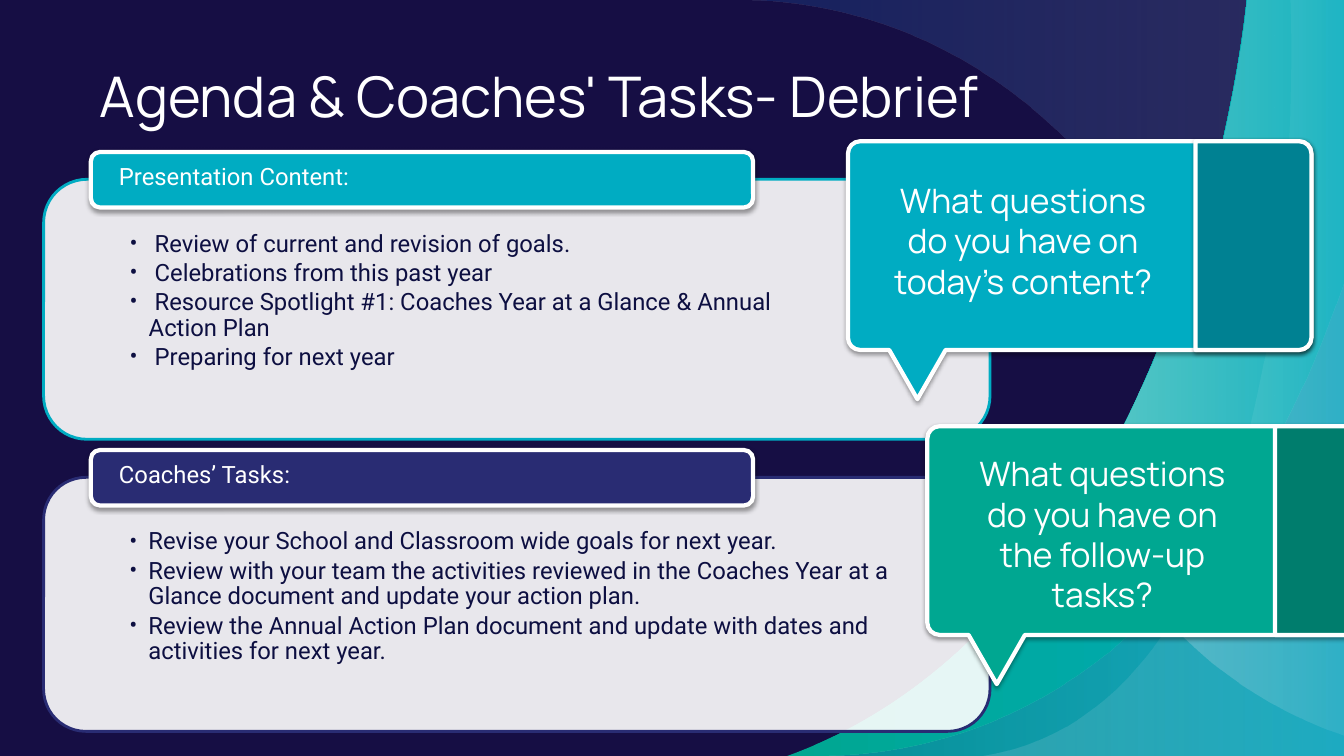
import pptx
import pptx.util
import pptx.dml.color
import pptx.enum.shapes
import pptx.enum.text
import pptx.oxml.ns
import lxml.etree

Cm, Pt = pptx.util.Cm, pptx.util.Pt
qn = pptx.oxml.ns.qn
rgb = pptx.dml.color.RGBColor.from_string
LEFT, CENTER = pptx.enum.text.PP_ALIGN.LEFT, pptx.enum.text.PP_ALIGN.CENTER
TOP, MIDDLE = pptx.enum.text.MSO_ANCHOR.TOP, pptx.enum.text.MSO_ANCHOR.MIDDLE
ROUNDED = pptx.enum.shapes.MSO_SHAPE.ROUNDED_RECTANGLE

COLORS = {
    "night": "160E44", "shade": "12102F", "ink": "0D0F41", "white": "FFFFFF",
    "cyan": "00ACC2", "deep cyan": "008192", "green": "00A791",
    "deep green": "007D6D", "indigo": "292C73", "sky": "8AAFDC",
    "blue": "114CA0", "black": "000000",
}

deck = pptx.Presentation()
deck.slide_width, deck.slide_height = Cm(33.87), Cm(19.05)
slide = deck.slides.add_slide(deck.slide_layouts[6])
slide.background.fill.solid()
slide.background.fill.fore_color.rgb = rgb(COLORS["night"])


def outline(points):
    """Freeform in cm; a point of six numbers is a Bezier curve."""
    vertices = [(Cm(p[i]), Cm(p[i + 1])) for p in points for i in range(0, len(p), 2)]
    builder = slide.shapes.build_freeform(*vertices[0])
    builder.add_line_segments(vertices[1:], close=True)
    shape = builder.convert_to_shape()
    segments = iter(list(shape.element.iter(qn("a:lnTo"))))
    for point in points[1:]:
        segment = next(segments)
        if len(point) == 6:
            curve = lxml.etree.Element(qn("a:cubicBezTo"))
            segment.addprevious(curve)
            for part in (segment, next(segments), next(segments)):
                curve.append(part[0])
                part.getparent().remove(part)
    return shape


def style(shape, fills, line=None, width=3, shadow=False):
    """Fill with one or two (colour, opacity) stops, then line and shadow."""
    if len(fills) == 1:
        shape.fill.solid()
        shape.fill.fore_color.rgb = rgb(COLORS[fills[0][0]])
    else:
        shape.fill.gradient()
        shape.fill.gradient_angle = 0
        for stop, (color, _) in zip(shape.fill.gradient_stops, fills):
            stop.color.rgb = rgb(COLORS[color])
    properties = shape.element.spPr
    for tint, (_, opacity) in zip(list(properties.iter(qn("a:srgbClr"))), fills):
        if opacity < 100:
            lxml.etree.SubElement(tint, qn("a:alpha"), val=str(opacity * 1000))
    if line:
        shape.line.color.rgb = rgb(COLORS[line])
        shape.line.width = Pt(width)
    else:
        shape.line.fill.background()
    shape.shadow.inherit = False
    if shadow:
        effects = properties.find(qn("a:effectLst"))
        outer = lxml.etree.SubElement(
            effects, qn("a:outerShdw"), blurRad=str(Pt(3.1)), dist=str(Pt(1.6)),
            dir="5400000", algn="t", rotWithShape="0")
        tint = lxml.etree.SubElement(outer, qn("a:srgbClr"), val=COLORS["black"])
        lxml.etree.SubElement(tint, qn("a:alpha"), val="38000")


# Background waves, gradients from left to right
RIGHT, BOTTOM = 36.14, 19.05
haze = [("blue", 29), ("sky", 18)]
waves = [
    ([(33.43, BOTTOM), (33.43, BOTTOM, 31.55, 0, 18.36, 0), (34.06, 0),
      (34.06, BOTTOM)], haze),
    ([(RIGHT, 0), (RIGHT, BOTTOM), (19.84, BOTTOM),
      (30.02, 15.34, 32.08, 0, 32.08, 0)], [("shade", 54)]),
    ([(19.84, BOTTOM), (RIGHT, BOTTOM), (RIGHT, 0), (31.42, 0),
      (31.42, 0, 30.81, 6.73, 27.43, 12.34),
      (25.7, 15.21, 23.27, 17.81, 19.84, BOTTOM)], [("green", 100), ("cyan", 100)]),
    ([(27.43, 12.34), (29.85, 18.64, RIGHT, BOTTOM, RIGHT, BOTTOM), (RIGHT, 0),
      (31.42, 0), (31.42, 0, 30.81, 6.73, 27.43, 12.34)],
     [("white", 36), ("white", 0)]),
    ([(32.51, 0), (32.51, 0, 33.38, 17.75, 24.74, BOTTOM), (RIGHT, BOTTOM),
      (RIGHT, 0)], [("white", 18), ("white", 0)]),
    ([(35.51, 0), (35.51, 0, 33.63, BOTTOM, 20.45, BOTTOM), (RIGHT, BOTTOM),
      (RIGHT, 0)], haze),
]
for points, fills in waves:
    style(outline(points), fills)

# Panels with their headings
panels = [
    ("Presentation Content:", "cyan", 4.52, 6.55, [
        " Review of current and revision of goals.",
        " Celebrations from this past year",
        " Resource Spotlight #1: Coaches Year at a Glance & Annual \vAction Plan",
        " Preparing for next year"]),
    ("Coaches’ Tasks:", "indigo", 12.03, 6.4, [
        "Revise your School and Classroom wide goals for next year.",
        "Review with your team the activities reviewed in the Coaches Year at a "
        "Glance document and update your action plan.",
        "Review the Annual Action Plan document and update with dates and "
        "activities for next year."]),
]
labels = []
for heading, color, top, height, items in panels:
    panel = slide.shapes.add_shape(ROUNDED, Cm(1.1), Cm(top), Cm(23.85), Cm(height))
    style(panel, [("white", 90)], color, 2)
    body = panel.text_frame
    body.margin_left = body.margin_right = Cm(1.85)
    body.margin_top, body.margin_bottom = Cm(1), Cm(0.33)
    body.vertical_anchor = TOP
    body.text = "\n".join(items)
    for item in body.paragraphs:
        item.line_spacing = 0.9
        item.space_after = Pt(2.5)
        layout = item._p.get_or_add_pPr()
        layout.set("marL", str(Cm(0.48)))
        layout.set("indent", str(-Cm(0.48)))
        lxml.etree.SubElement(layout, qn("a:buFont"), typeface="Roboto")
        lxml.etree.SubElement(layout, qn("a:buChar"), char="•")

    tab = slide.shapes.add_shape(ROUNDED, Cm(2.29), Cm(top - 0.69), Cm(16.69), Cm(1.4))
    style(tab, [(color, 100)], "white", shadow=True)
    name = tab.text_frame
    name.margin_left = name.margin_right = Cm(0.64)
    name.margin_top, name.margin_bottom = 0, Cm(0.12)
    name.vertical_anchor = MIDDLE
    name.text = heading
    name.paragraphs[0].line_spacing = 0.9
    labels += [(body, "Roboto", 17, "ink", LEFT), (name, "Roboto", 17, "white", LEFT)]

# Title
title = slide.shapes.add_textbox(Cm(2.26), Cm(1.22), Cm(30), Cm(2.34)).text_frame
title.vertical_anchor = MIDDLE
title.text = "Agenda & Coaches' Tasks- Debrief"
labels.append((title, "Manrope", 40, "white", LEFT))

# Speech bubbles with a darker end
WIDTH, HEIGHT, ROUND, DIVIDER = 11.68, 5.26, 0.31, 8.76
callouts = [
    ("What questions do you have on today’s content?",
     "cyan", "deep cyan", 21.37, 3.56, 0.83, True),
    ("What questions do you have on the follow-up tasks?",
     "green", "deep green", 23.37, 10.74, 1.05, False),
]
for question, color, dark, x, y, drop, end_shadow in callouts:
    r, b, k = x + WIDTH, y + HEIGHT, ROUND * 0.45
    right_side = [
        (r - ROUND, y), (r - k, y, r, y + k, r, y + ROUND), (r, b - ROUND),
        (r, b - k, r - k, b, r - ROUND, b)]
    bubble = outline(right_side + [
        (x + 2.46, b), (x + 1.75, b + 1.24), (x + 1.04, b), (x + ROUND, b),
        (x + k, b, x, b - k, x, b - ROUND), (x, y + ROUND),
        (x, y + k, x + k, y, x + ROUND, y)])
    style(bubble, [(color, 100)], "white", shadow=True)
    end = outline(right_side + [(x + DIVIDER, b), (x + DIVIDER, y)])
    style(end, [(dark, 100)], "white", shadow=end_shadow)
    box = slide.shapes.add_textbox(Cm(x + 0.55), Cm(y + drop), Cm(7.72), Cm(3.33))
    box.text_frame.vertical_anchor = MIDDLE
    box.text_frame.text = question
    labels.append((box.text_frame, "Manrope", 24, "white", CENTER))

# Fonts
for frame, font, size, color, align in labels:
    frame.word_wrap = True
    for paragraph in frame.paragraphs:
        paragraph.alignment = align
        for run in paragraph.runs:
            run.font.name, run.font.size = font, Pt(size)
            run.font.color.rgb = rgb(COLORS[color])

deck.save("out.pptx")
